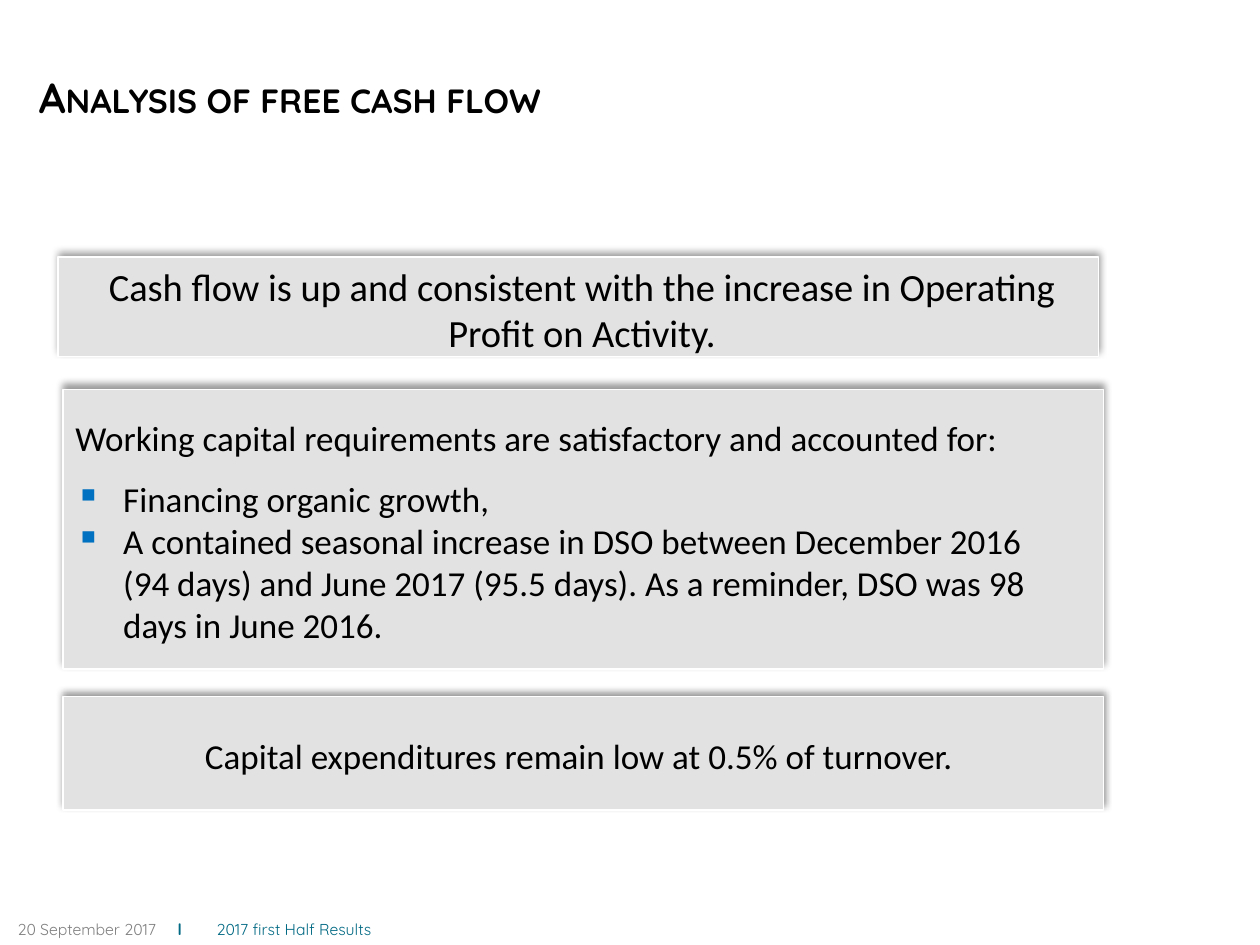
import pptx
import pptx.dml.color
import pptx.enum.shapes
import pptx.enum.text
import pptx.oxml
import pptx.oxml.ns
import pptx.util

Inches = pptx.util.Inches
Pt = pptx.util.Pt
RGBColor = pptx.dml.color.RGBColor
Align = pptx.enum.text.PP_ALIGN
Anchor = pptx.enum.text.MSO_ANCHOR

BLACK = RGBColor(0x00, 0x00, 0x00)
WHITE = RGBColor(0xFF, 0xFF, 0xFF)
PANEL_GREY = RGBColor(0xE2, 0xE2, 0xE2)
FOOTER_GREY = RGBColor(0x80, 0x80, 0x80)
TEAL = RGBColor(0x00, 0x69, 0x83)
BULLET_BLUE = RGBColor(0x00, 0x70, 0xC0)

NAMESPACE = pptx.oxml.ns.nsdecls("a")
SHADOW = f"""<a:effectLst {NAMESPACE}>
  <a:outerShdw blurRad="{Pt(4)}" dist="{Pt(3)}" dir="16200000" rotWithShape="0">
    <a:srgbClr val="{BLACK}"><a:alpha val="40000"/></a:srgbClr>
  </a:outerShdw>
</a:effectLst>"""


def set_attributes(target, values):
    for name, value in values.items():
        setattr(target, name, value)


class SlideWriter:
    """Holds the text style and the slide being filled."""

    body_font = "Calibri"
    brand_font = "Quicksand"
    panel_width = 8.26
    bullet_indent = Inches(0.38)

    def __init__(self, slide):
        self.slide = slide

    def panel(self, left, top, height):
        shape = self.slide.shapes.add_shape(
            pptx.enum.shapes.MSO_SHAPE.RECTANGLE,
            Inches(left), Inches(top), Inches(self.panel_width), Inches(height))
        shape.fill.solid()
        shape.fill.fore_color.rgb = PANEL_GREY
        shape.line.color.rgb = WHITE
        shape.line.width = Pt(0.75)
        shape._element.spPr.append(pptx.oxml.parse_xml(SHADOW))
        return shape.text_frame

    def text_box(self, left, top, width, height, **frame_format):
        shape = self.slide.shapes.add_textbox(
            Inches(left), Inches(top), Inches(width), Inches(height))
        set_attributes(shape.text_frame, {"word_wrap": True, **frame_format})
        return shape.text_frame

    def style_run(self, run, size, color=BLACK, **font_format):
        run.font.color.rgb = color
        set_attributes(run.font, {"name": self.body_font, "size": Pt(size), **font_format})

    def paragraph(self, frame, text, size, bullet=False, align=Align.LEFT,
                  space_after=0, **font_format):
        paragraph = frame.paragraphs[0] if not frame.text else frame.add_paragraph()
        paragraph.text = text
        set_attributes(paragraph, {"alignment": align, "space_after": Pt(space_after)})
        if bullet:
            self.add_bullet(paragraph)
        for run in paragraph.runs:
            self.style_run(run, size, **font_format)
        return paragraph

    def add_bullet(self, paragraph):
        properties = paragraph._p.get_or_add_pPr()
        properties.set("marL", str(self.bullet_indent))
        properties.set("indent", str(-self.bullet_indent))
        for xml in (f'<a:buClr {NAMESPACE}><a:srgbClr val="{BULLET_BLUE}"/></a:buClr>',
                    f'<a:buChar {NAMESPACE} char="▪"/>'):
            properties.append(pptx.oxml.parse_xml(xml))

    def tabbed_line(self, frame, parts, stops, size):
        paragraph = frame.paragraphs[0]
        tabs = "".join(f'<a:tab pos="{Inches(stop)}" algn="l"/>' for stop in stops)
        paragraph._p.get_or_add_pPr().append(
            pptx.oxml.parse_xml(f"<a:tabLst {NAMESPACE}>{tabs}</a:tabLst>"))
        for index, (text, color, bold) in enumerate(parts):
            run = paragraph.add_run()
            run.text = ("\t" if index else "") + text
            self.style_run(run, size, color, name=self.brand_font, bold=bold)


def main():
    presentation = pptx.Presentation()
    set_attributes(presentation, {"slide_width": Inches(10), "slide_height": Inches(7.5)})
    slide = presentation.slides.add_slide(presentation.slide_layouts[6])
    writer = SlideWriter(slide)

    # Footer
    footer = writer.text_box(0.14, 7.23, 4.96, 0.29, vertical_anchor=Anchor.MIDDLE,
                             margin_left=0, margin_right=0, margin_top=0, margin_bottom=0)
    writer.tabbed_line(footer, [("20 September 2017", FOOTER_GREY, False),
                                ("l", TEAL, True),
                                ("2017 first Half Results", TEAL, False)],
                       stops=(1.27, 1.58), size=9)

    # Title in small capitals
    title = writer.text_box(0.21, 0.52, 9, 0.5)
    heading = writer.paragraph(title, "Analysis of free cash flow", 24,
                               name=writer.brand_font, bold=True)
    heading.runs[0].font._element.set("cap", "small")

    # Cash flow
    writer.panel(0.46, 2.04, 0.79)
    cash_flow = writer.text_box(0.46, 2.04, 8.32, 0.79)
    writer.paragraph(cash_flow, "Cash flow is up and consistent with the increase in "
                     "Operating Profit on Activity.", 22, align=Align.CENTER)

    # Working capital
    capital = writer.panel(0.5, 3.09, 2.22)
    set_attributes(capital, {"vertical_anchor": Anchor.MIDDLE, "word_wrap": True,
                             "margin_top": Inches(0.08), "margin_bottom": Inches(0.05)})
    writer.paragraph(capital, "Working capital requirements are satisfactory and "
                     "accounted for:", 20, space_after=11)
    for text in ("Financing organic growth,",
                 "A contained seasonal increase in DSO between December 2016 \v"
                 "(94 days) and June 2017 (95.5 days). As a reminder, DSO was 98 "
                 "days in June 2016."):
        writer.paragraph(capital, text, 20, bullet=True)

    # Capital expenditures
    writer.panel(0.5, 5.53, 0.9)
    expenditures = writer.text_box(0.5, 5.78, 8.19, 0.44)
    writer.paragraph(expenditures, "Capital expenditures remain low at 0.5% of turnover.",
                     20, align=Align.CENTER, space_after=6)

    presentation.save("out.pptx")


if __name__ == "__main__":
    main()
